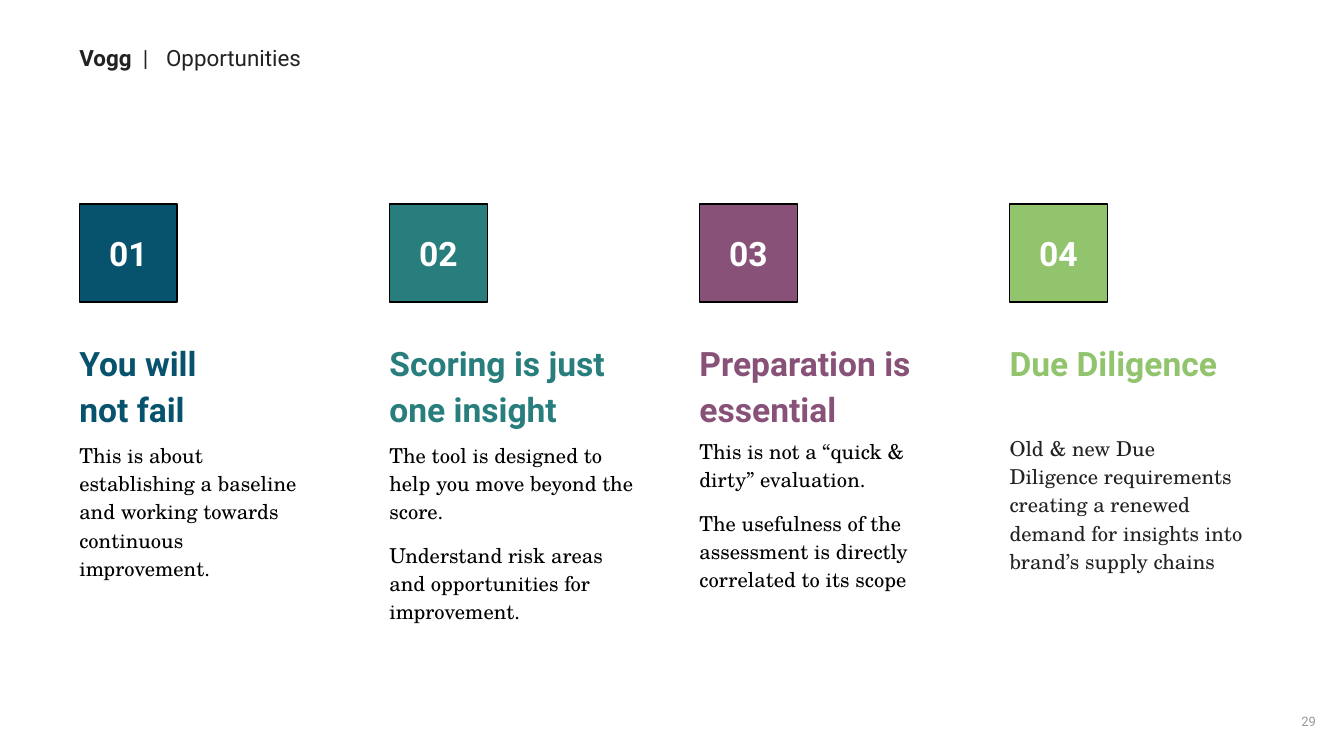
from dataclasses import dataclass

from lxml import etree
from pptx import Presentation
from pptx.dml.color import RGBColor
from pptx.enum import shapes, text
from pptx.oxml.ns import qn
from pptx.util import Cm, Pt

BLACK = RGBColor(0x00, 0x00, 0x00)
INK = RGBColor(0x22, 0x22, 0x22)
GREY = RGBColor(0x99, 0x99, 0x99)
WHITE = RGBColor(0xFF, 0xFF, 0xFF)
BLUE = RGBColor(0x07, 0x53, 0x6D)
TEAL = RGBColor(0x28, 0x7D, 0x7D)
PLUM = RGBColor(0x88, 0x52, 0x78)
GREEN = RGBColor(0x92, 0xC4, 0x6D)

SANS = "Roboto"
SERIF = "TeX Gyre Schola"

MARGIN = 1.5
COLUMN_PITCH = 5.86
COLUMN_TOP = 3.86
BADGE_SIZE = 1.85
HEADING_OFFSET = 2.26
INSET = Cm(0.25)


@dataclass
class Opportunity:
    heading: str
    body: list
    color: RGBColor
    heading_width: float
    body_width: float
    body_offset: float
    body_color: RGBColor = BLACK


OPPORTUNITIES = [
    Opportunity(
        "You will not fail",
        ["This is about establishing a baseline and working towards "
         "continuous improvement."],
        BLUE, 3.3, 4.52, 4.19),
    Opportunity(
        "Scoring is just one insight",
        ["The tool is designed to help you move beyond the score.",
         "Understand risk areas and opportunities for improvement."],
        TEAL, 4.42, 4.75, 4.19),
    Opportunity(
        "Preparation is essential",
        ["This is not a “quick & dirty” evaluation.",
         "The usefulness of the assessment is directly correlated to its scope"],
        PLUM, 4.14, 4.52, 4.12),
    Opportunity(
        "Due Diligence",
        ["Old & new Due Diligence requirements creating a renewed demand "
         "for insights into brand’s supply chains"],
        GREEN, 5.08, 4.52, 4.06, INK),
]


def style_font(font, name, size, color, bold=False):
    font.name = name
    font.size = Pt(size)
    font.color.rgb = color
    font.bold = bold


def add_text_box(slide, left, top, width, height, side_inset=0):
    box = slide.shapes.add_textbox(Cm(left), Cm(top), Cm(width), Cm(height))
    frame = box.text_frame
    frame.word_wrap = True
    frame.margin_left = frame.margin_right = side_inset
    frame.margin_top = frame.margin_bottom = INSET
    return frame


def fill_paragraphs(frame, lines, name, size, color, bold=False):
    for index, line in enumerate(lines):
        paragraph = frame.add_paragraph() if index else frame.paragraphs[0]
        paragraph.text = line
        paragraph.line_spacing = 1.15
        if index:
            paragraph.space_before = Pt(8)
        style_font(paragraph.font, name, size, color, bold)


def add_title(slide, left, top, width, height):
    paragraph = add_text_box(slide, left, top, width, height).paragraphs[0]
    properties = paragraph._p.get_or_add_pPr()
    tabs = etree.SubElement(properties, qn("a:tabLst"))
    for position in (1.2, 1.64):
        etree.SubElement(tabs, qn("a:tab"), pos=str(Cm(position)), algn="l")
    for words, bold in (("Vogg", True), ("\t|\tOpportunities", False)):
        run = paragraph.add_run()
        run.text = words
        style_font(run.font, SANS, 12, INK, bold)


def add_badge(slide, left, top, size, number, color):
    badge = slide.shapes.add_shape(
        shapes.MSO_SHAPE.RECTANGLE, Cm(left), Cm(top), Cm(size), Cm(size))
    badge.shadow.inherit = False
    badge.fill.solid()
    badge.fill.fore_color.rgb = color
    badge.line.color.rgb = BLACK
    badge.line.width = Pt(0.75)
    frame = badge.text_frame
    frame.vertical_anchor = text.MSO_ANCHOR.MIDDLE
    paragraph = frame.paragraphs[0]
    paragraph.text = f"{number:02}"
    paragraph.alignment = text.PP_ALIGN.CENTER
    style_font(paragraph.font, SANS, 18, WHITE, True)


def add_opportunity(slide, left, top, number, item):
    """Stack a numbered badge, a heading and body text from the given corner."""
    add_badge(slide, left, top, BADGE_SIZE, number, item.color)
    heading = add_text_box(
        slide, left, top + HEADING_OFFSET, item.heading_width, 2.5)
    fill_paragraphs(heading, [item.heading], SANS, 18, item.color, True)
    body = add_text_box(slide, left, top + item.body_offset, item.body_width, 3.6)
    fill_paragraphs(body, item.body, SERIF, 11, item.body_color)


def add_page_number(slide, left, top, width, height, number):
    frame = add_text_box(slide, left, top, width, height, INSET)
    frame.vertical_anchor = text.MSO_ANCHOR.MIDDLE
    paragraph = frame.paragraphs[0]
    paragraph.text = str(number)
    paragraph.alignment = text.PP_ALIGN.RIGHT
    style_font(paragraph.font, SANS, 7, GREY)


def main():
    presentation = Presentation()
    presentation.slide_width = Cm(25.4)
    presentation.slide_height = Cm(14.29)
    slide = presentation.slides.add_slide(presentation.slide_layouts[6])
    add_title(slide, MARGIN, 0.58, 12.19, 1.35)
    for index, item in enumerate(OPPORTUNITIES):
        left = MARGIN + index * COLUMN_PITCH
        add_opportunity(slide, left, COLUMN_TOP, index + 1, item)
    add_page_number(slide, 24.23, 13.08, 0.89, 1.09, 29)
    presentation.save("out.pptx")


if __name__ == "__main__":
    main()
